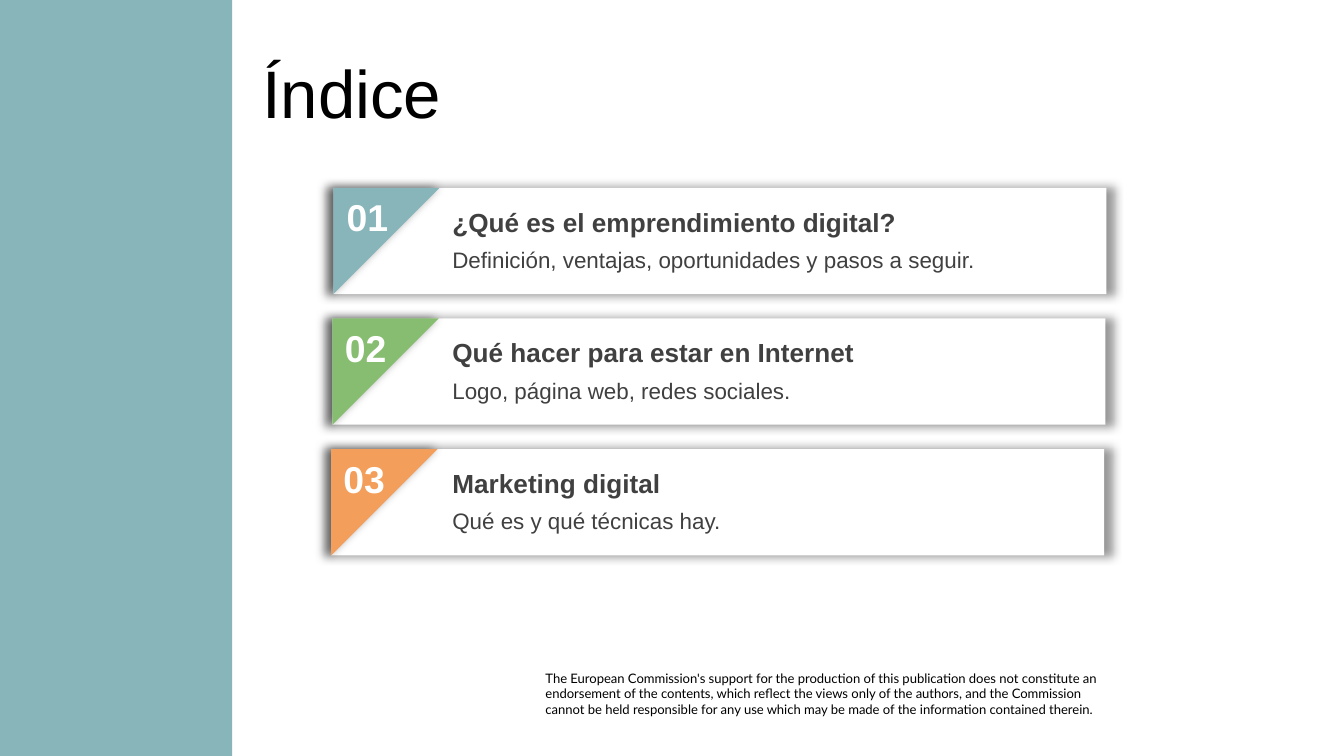
from lxml import etree
from pptx import Presentation
from pptx.dml.color import RGBColor
from pptx.enum.shapes import MSO_SHAPE
from pptx.enum.text import MSO_ANCHOR, MSO_AUTO_SIZE, PP_ALIGN
from pptx.oxml.ns import qn
from pptx.util import Cm, Pt

RECT = MSO_SHAPE.RECTANGLE
CORNER = MSO_SHAPE.RIGHT_TRIANGLE
MIDDLE = MSO_ANCHOR.MIDDLE
LEFT = PP_ALIGN.LEFT
NO_FIT = MSO_AUTO_SIZE.NONE

TEAL = RGBColor(0x87, 0xB5, 0xBA)
GREEN = RGBColor(0x86, 0xBD, 0x70)
ORANGE = RGBColor(0xF3, 0x9E, 0x5A)
WHITE = RGBColor(0xFF, 0xFF, 0xFF)
BLACK = RGBColor(0x00, 0x00, 0x00)
GRAY = RGBColor(0x40, 0x40, 0x40)

HIGH = 14.29
SIDE = 2.01
PITCH = 2.47
SHIFT = 0.02

TOPICS = [
    ("01", TEAL, "¿Qué es el emprendimiento digital?",
     "Definición, ventajas, oportunidades y pasos a seguir."),
    ("02", GREEN, "Qué hacer para estar en Internet",
     "Logo, página web, redes sociales."),
    ("03", ORANGE, "Marketing digital", "Qué es y qué técnicas hay."),
]
NOTICE = [
    "The European Commission's support for the production of this publication "
    "does not constitute an endorsement of the contents, which reflect the "
    "views only of the authors, and the Commission",
    "cannot be held responsible for any use which may be made of the "
    "information contained therein.",
]


def add_run(para, text, size, color, font="Arial", bold=False):
    run = para.add_run()
    run.text = text
    run.font.name = font
    run.font.size = Pt(size)
    run.font.bold = bold
    run.font.color.rgb = color


def add_block(shapes, kind, box, color):
    block = shapes.add_shape(kind, *map(Cm, box))
    block.shadow.inherit = False
    block.fill.solid()
    block.fill.fore_color.rgb = color
    block.line.fill.background()
    return block


def add_glow(block):
    effects = block.element.spPr.find(qn("a:effectLst"))
    glow = etree.SubElement(
        effects, qn("a:outerShdw"), blurRad=str(Pt(5)), dist="0",
        sx="102000", sy="102000", algn="ctr", rotWithShape="0")
    tint = etree.SubElement(glow, qn("a:prstClr"), val="black")
    etree.SubElement(tint, qn("a:alpha"), val="40000")


def add_label(shapes, box, text, size, color, bold=False):
    frame = shapes.add_textbox(*map(Cm, box)).text_frame
    frame.word_wrap = True
    add_run(frame.paragraphs[0], text, size, color, bold=bold)


def add_topic(slide, row, number, color, head, detail):
    left = 6.3 - row * SHIFT
    top = 3.55 + row * PITCH
    card = slide.shapes.add_group_shape().shapes
    add_glow(add_block(card, RECT, (left, top, 14.61, SIDE), WHITE))
    corner = add_block(card, CORNER, (left, top, SIDE, SIDE), color)
    corner.rotation = 90
    add_glow(corner)
    add_label(slide.shapes, (left - row * SHIFT / 2, top, 1.47, 1.12),
              number, 20, WHITE, True)
    texts = slide.shapes.add_group_shape().shapes
    add_label(texts, (8.3, top + 0.22, 12.19, 0.86), head, 14, GRAY, True)
    add_label(texts, (8.3, top + 0.98, 12.19, 0.76), detail, 12, GRAY)


def add_title(slide):
    title = slide.shapes.title
    title.left, title.top = Cm(4.7), Cm(0.94)
    title.width, title.height = Cm(18.29), Cm(1.6)
    frame = title.text_frame
    frame.auto_size = NO_FIT
    frame.vertical_anchor = MIDDLE
    para = frame.paragraphs[0]
    para.alignment = LEFT
    add_run(para, "Índice", 36, BLACK)


def add_notice(slide):
    box = slide.shapes.add_textbox(Cm(10.31), Cm(12.67), Cm(10.6), Cm(0.89))
    frame = box.text_frame
    frame.word_wrap = True
    frame.margin_left = frame.margin_right = 0
    frame.margin_top = frame.margin_bottom = 0
    for row, text in enumerate(NOTICE):
        para = frame.add_paragraph() if row else frame.paragraphs[0]
        add_run(para, text, 7, BLACK, "Lato")


def main():
    deck = Presentation()
    deck.slide_width, deck.slide_height = Cm(25.4), Cm(HIGH)
    slide = deck.slides.add_slide(deck.slide_layouts[5])
    add_notice(slide)
    add_block(slide.shapes, RECT, (0, 0, 4.39, HIGH), TEAL)
    add_title(slide)
    for row, topic in enumerate(TOPICS):
        add_topic(slide, row, *topic)
    deck.save("out.pptx")


if __name__ == "__main__":
    main()
